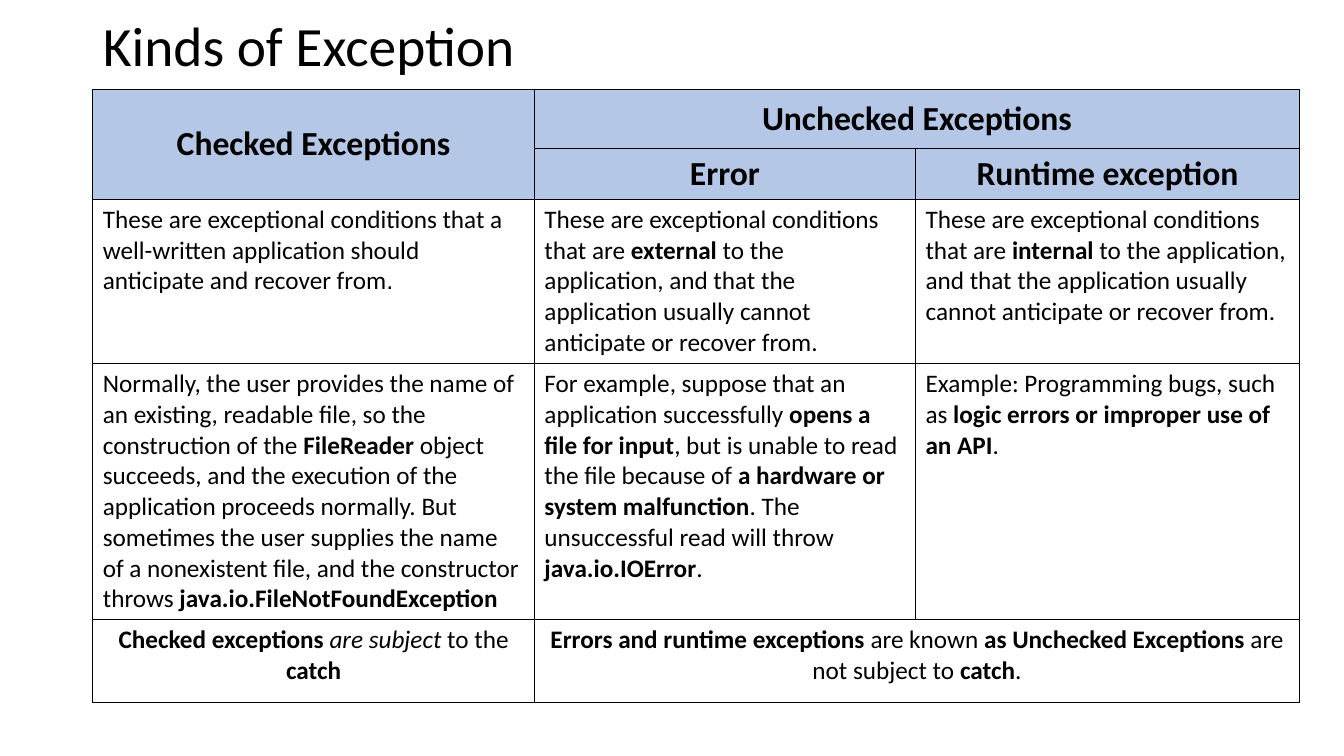
from dataclasses import dataclass

import pptx
import pptx.dml.color
import pptx.enum.text
import pptx.oxml
import pptx.oxml.ns
import pptx.util
from pptx.util import Inches

COLORS = {"text": "000000", "header": "B4C7E7", "border": "000000"}
FONT = "Calibri"
COLUMN_WIDTHS = (4.38, 3.78, 3.81)
ROW_HEIGHTS = (0.58, 0.5, 1.63, 2.54, 0.82)
ALIGN = pptx.enum.text.PP_ALIGN
ANCHOR = pptx.enum.text.MSO_ANCHOR


@dataclass(frozen=True)
class Span:
    text: str
    bold: bool = False
    italic: bool = False
    font: str = FONT


@dataclass(frozen=True)
class Entry:
    row: int
    column: int
    spans: tuple[Span, ...]
    rows: int = 1
    columns: int = 1
    header: bool = False
    centered: bool = False


def header(row: int, column: int, text: str, rows: int = 1, columns: int = 1) -> Entry:
    return Entry(row, column, (Span(text, bold=True),), rows, columns, True, True)


def condition(column: int, origin: str) -> Entry:
    """Describe an unchecked kind by where its conditions come from."""
    return Entry(2, column, (
        Span("These are exceptional conditions that are "),
        Span(origin, bold=True),
        Span(" to the application, and that the application usually "
             "cannot anticipate or recover from."),
    ))


ENTRIES = (
    # Headings
    header(0, 0, "Checked Exceptions", rows=2),
    header(0, 1, "Unchecked Exceptions", columns=2),
    header(1, 1, "Error"),
    header(1, 2, "Runtime exception"),
    # Definitions
    Entry(2, 0, (
        Span("These are exceptional conditions that a well-written application "
             "should anticipate and recover from"),
        Span(".", font="Arial"),
    )),
    condition(1, "external"),
    condition(2, "internal"),
    # Examples
    Entry(3, 0, (
        Span("Normally, the user provides the name of an existing, readable file, "
             "so the construction of the "),
        Span("FileReader", bold=True),
        Span(" object succeeds, and the execution of the application proceeds "
             "normally. But sometimes the user supplies the name of a nonexistent "
             "file, and the constructor throws "),
        Span("java.io.FileNotFoundException", bold=True),
    )),
    Entry(3, 1, (
        Span("For example, suppose that an application successfully "),
        Span("opens a file for input", bold=True),
        Span(", but is unable to read the file because of "),
        Span("a hardware or system malfunction", bold=True),
        Span(". The unsuccessful read will throw "),
        Span("java.io.IOError", bold=True),
        Span("."),
    )),
    Entry(3, 2, (
        Span("Example: Programming bugs, such as "),
        Span("logic errors or improper use of an API", bold=True),
        Span("."),
    )),
    # Summary
    Entry(4, 0, (
        Span("Checked exceptions ", bold=True),
        Span("are subject", italic=True),
        Span(" to the "),
        Span("catch", bold=True),
    ), centered=True),
    Entry(4, 1, (
        Span("Errors and runtime exceptions ", bold=True),
        Span("are known "),
        Span("as Unchecked Exceptions ", bold=True),
        Span("are not subject to "),
        Span("catch", bold=True),
        Span("."),
    ), columns=2, centered=True),
)


def rgb(name: str) -> pptx.dml.color.RGBColor:
    return pptx.dml.color.RGBColor.from_string(COLORS[name])


def style_font(font, name: str, size: float, bold: bool = False, italic: bool = False) -> None:
    font.name = name
    font.size = pptx.util.Pt(size)
    font.bold = bold
    font.italic = italic
    font.color.rgb = rgb("text")


def add_borders(cell) -> None:
    properties = cell._tc.get_or_add_tcPr()
    for side in ("lnL", "lnR", "lnT", "lnB"):
        properties.append(pptx.oxml.parse_xml(
            f'<a:{side} {pptx.oxml.ns.nsdecls("a")} w="12700"><a:solidFill>'
            f'<a:srgbClr val="{COLORS["border"]}"/></a:solidFill></a:{side}>'
        ))


def fill_entry(table, entry: Entry) -> None:
    cell = table.cell(entry.row, entry.column)
    if entry.rows > 1 or entry.columns > 1:
        cell.merge(table.cell(entry.row + entry.rows - 1,
                              entry.column + entry.columns - 1))
    if entry.header:
        cell.fill.solid()
        cell.fill.fore_color.rgb = rgb("header")
    cell.vertical_anchor = ANCHOR.MIDDLE if entry.header else ANCHOR.TOP
    para = cell.text_frame.paragraphs[0]
    para.alignment = ALIGN.CENTER if entry.centered else ALIGN.LEFT
    for span in entry.spans:
        run = para.add_run()
        run.text = span.text
        style_font(run.font, span.font, 24 if entry.header else 18, span.bold, span.italic)


def add_title(page) -> None:
    title = page.shapes.title
    title.left, title.top = Inches(0.92), Inches(0.21)
    title.width, title.height = Inches(11.5), Inches(0.54)
    frame = title.text_frame
    frame.text = "Kinds of Exception"
    frame.auto_size = pptx.enum.text.MSO_AUTO_SIZE.NONE
    frame.vertical_anchor = ANCHOR.MIDDLE
    para = frame.paragraphs[0]
    para.alignment = ALIGN.LEFT
    para.line_spacing = 0.9
    style_font(para.runs[0].font, FONT, 39.6)


def add_exception_table(page) -> None:
    table = page.shapes.add_table(
        len(ROW_HEIGHTS), len(COLUMN_WIDTHS), Inches(0.92), Inches(0.89),
        Inches(sum(COLUMN_WIDTHS)), Inches(sum(ROW_HEIGHTS)),
    ).table
    table.horz_banding = False
    table.first_row = False
    for column, width in zip(table.columns, COLUMN_WIDTHS):
        column.width = Inches(width)
    for row, height in zip(table.rows, ROW_HEIGHTS):
        row.height = Inches(height)
    for cell in table.iter_cells():
        add_borders(cell)
        cell.fill.background()
    for entry in ENTRIES:
        fill_entry(table, entry)


def main() -> None:
    deck = pptx.Presentation()
    deck.slide_width, deck.slide_height = Inches(13.33), Inches(7.5)
    page = deck.slides.add_slide(deck.slide_layouts[5])
    add_title(page)
    add_exception_table(page)
    deck.save("out.pptx")


if __name__ == "__main__":
    main()
